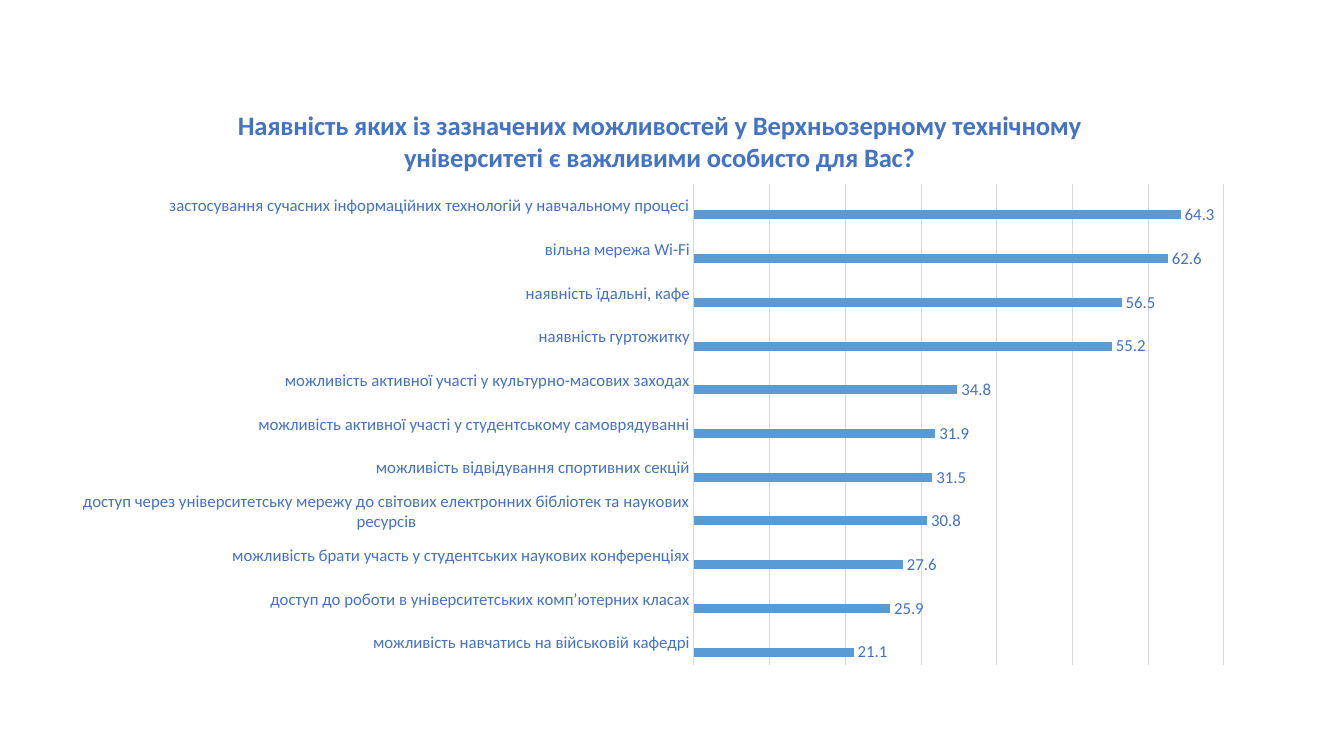
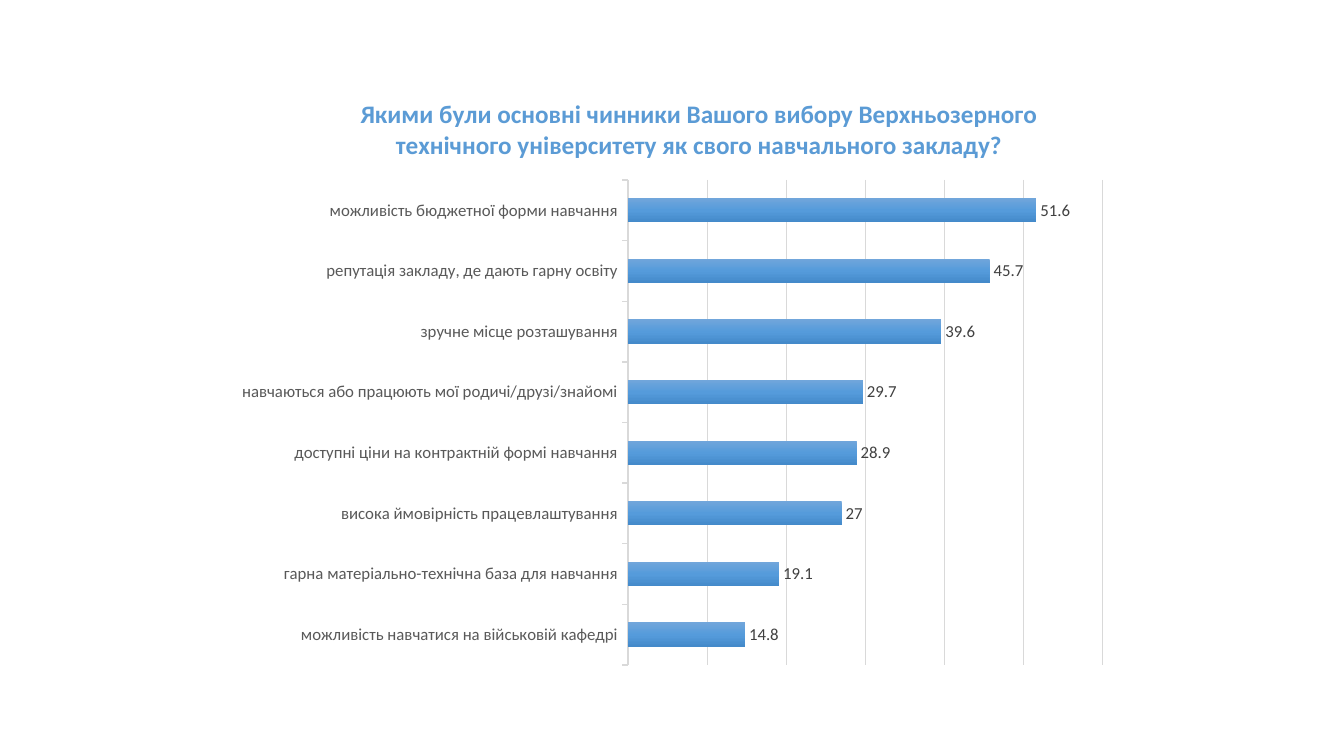
from copy import deepcopy
from dataclasses import dataclass
from typing import Optional

from lxml.etree import SubElement
from pptx import Presentation
from pptx.chart.chart import Chart
from pptx.chart.data import CategoryChartData
from pptx.dml.color import RGBColor as RGB
from pptx.dml.fill import FillFormat
from pptx.enum.chart import XL_CHART_TYPE as ChartType
from pptx.enum.chart import XL_LABEL_POSITION as LabelPos
from pptx.enum.chart import XL_TICK_LABEL_POSITION as TickLabels
from pptx.enum.chart import XL_TICK_MARK as Tick
from pptx.oxml.ns import qn
from pptx.text.text import Font
from pptx.util import Emu, Pt

SLIDE_W, SLIDE_H = 1344, 756
PX = 12192000 / SLIDE_W


@dataclass(frozen=True)
class Theme:
    face: str = "Calibri"
    blue: str = "4472C4"
    sky: str = "5B9BD5"
    orange: str = "ED7D31"
    silver: str = "A5A5A5"
    grid: str = "D9D9D9"
    grey: str = "595959"
    dark: str = "404040"
    gradient: tuple[str, ...] = ("71A6DB", "559BDB", "448ACA")
    label_size: int = 12
    grid_width: float = 0.75


THEME = Theme()


@dataclass(frozen=True)
class Box:
    left: int
    top: int
    width: int
    height: int


@dataclass(frozen=True)
class Survey:
    title: str
    title_size: int
    title_color: str
    title_left: int
    title_top: int
    frame: Box
    plot: Box
    answers: tuple[tuple[str, float], ...]  # from the bottom bar up
    fills: tuple[tuple[str, ...], ...]  # one per series; only the first has values
    axis_max: int
    gap: int
    category_color: str
    value_color: str
    tick: Tick
    axis_width: float


SURVEYS = (
    Survey(
        title="Наявність яких із зазначених можливостей у Верхньозерному технічному "
              "університеті є важливими особисто для Вас?",
        title_size=19, title_color=THEME.blue, title_left=233, title_top=102,
        frame=Box(59, 80, 1188, 598), plot=Box(694, 184, 530, 481),
        answers=(
            ("можливість навчатись на військовій кафедрі", 21.1),
            ("доступ до роботи в університетських комп’ютерних класах", 25.9),
            ("можливість брати участь у студентських наукових конференціях", 27.6),
            ("доступ через університетську мережу до світових електронних "
             "бібліотек та наукових ресурсів", 30.8),
            ("можливість відвідування спортивних секцій", 31.5),
            ("можливість активної участі у студентському самоврядуванні", 31.9),
            ("можливість активної участі у культурно-масових заходах", 34.8),
            ("наявність гуртожитку", 55.2),
            ("наявність їдальні, кафе", 56.5),
            ("вільна мережа Wi-Fi", 62.6),
            ("застосування сучасних інформаційних технологій у навчальному процесі", 64.3),
        ),
        fills=((THEME.sky,), (THEME.orange,), (THEME.silver,)),
        axis_max=70, gap=182, category_color=THEME.blue, value_color=THEME.blue,
        tick=Tick.NONE, axis_width=0.75,
    ),
    Survey(
        title="Якими були основні чинники Вашого вибору Верхньозерного "
              "технічного університету як свого навчального закладу?",
        title_size=18, title_color=THEME.sky, title_left=356, title_top=92,
        frame=Box(224, 80, 896, 598), plot=Box(628, 180, 475, 485),
        answers=(
            ("можливість навчатися на військовій кафедрі", 14.8),
            ("гарна матеріально-технічна база для навчання", 19.1),
            ("висока ймовірність працевлаштування", 27),
            ("доступні ціни на контрактній формі навчання", 28.9),
            ("навчаються або працюють мої родичі/друзі/знайомі", 29.7),
            ("зручне місце розташування", 39.6),
            ("репутація закладу, де дають гарну освіту", 45.7),
            ("можливість бюджетної форми навчання", 51.6),
        ),
        fills=(THEME.gradient,),
        axis_max=60, gap=150, category_color=THEME.grey, value_color=THEME.dark,
        tick=Tick.OUTSIDE, axis_width=1,
    ),
)


def px(n: int) -> Emu:
    return Emu(round(n * PX))


def set_font(font: Font, size: int, color: str, bold: bool = False) -> None:
    font.name, font.size, font.bold = THEME.face, Pt(size), bold
    font.color.rgb = RGB.from_string(color)


def paint(fill: FillFormat, colors: tuple[str, ...], gs_list_owner) -> None:
    """Fill solid for one colour, else with an even top-to-bottom gradient."""
    if len(colors) == 1:
        fill.solid()
        fill.fore_color.rgb = RGB.from_string(colors[0])
        return
    fill.gradient()
    fill.gradient_angle = 270
    gs_list = next(gs_list_owner.iter(qn("a:gsLst")))
    for _ in colors[2:]:
        gs_list.insert(1, deepcopy(gs_list[0]))
    for i, (stop, color) in enumerate(zip(fill.gradient_stops, colors)):
        stop.position = i / (len(colors) - 1)
        stop.color.rgb = RGB.from_string(color)


def set_layout(parent, index: int, frame: Box, left: int, top: int,
               size: Optional[tuple[int, int]] = None) -> None:
    """Fix the place of a chart part, given in slide px, inside the chart frame."""
    for old in parent.findall(qn("c:layout")):
        parent.remove(old)
    layout = SubElement(parent, qn("c:layout"))
    parent.insert(index, layout)
    manual = SubElement(layout, qn("c:manualLayout"))
    values = {"xMode": "edge", "yMode": "edge",
              "x": (left - frame.left) / frame.width,
              "y": (top - frame.top) / frame.height}
    if size:
        values = {"layoutTarget": "inner", **values,
                  "w": size[0] / frame.width, "h": size[1] / frame.height}
    for tag, value in values.items():
        SubElement(manual, qn(f"c:{tag}")).set("val", str(value))


def style_title(chart: Chart, survey: Survey) -> None:
    chart.has_title = True
    tf = chart.chart_title.text_frame
    tf.text = survey.title
    set_font(tf.paragraphs[0].font, survey.title_size, survey.title_color, bold=True)
    chart.chart_title.include_in_layout = False
    title = chart.element.xpath("c:chart/c:title")[0]
    set_layout(title, 1, survey.frame, survey.title_left, survey.title_top)


def style_axes(chart: Chart, survey: Survey) -> None:
    cat, val = chart.category_axis, chart.value_axis
    cat.major_tick_mark, cat.minor_tick_mark = survey.tick, Tick.NONE
    cat.tick_label_position = TickLabels.NEXT_TO_AXIS
    cat.has_major_gridlines = False
    set_font(cat.tick_labels.font, THEME.label_size, survey.category_color)
    val.visible = False
    val.minimum_scale, val.maximum_scale, val.major_unit = 0, survey.axis_max, 10
    val.has_major_gridlines = True
    for line, width in ((cat.format.line, survey.axis_width),
                        (val.major_gridlines.format.line, THEME.grid_width)):
        line.color.rgb = RGB.from_string(THEME.grid)
        line.width = Pt(width)


def style_bars(chart: Chart, survey: Survey) -> None:
    plot = chart.plots[0]
    plot.gap_width, plot.overlap = survey.gap, 0
    plot.vary_by_categories = False
    for series, colors in zip(plot.series, survey.fills):
        paint(series.format.fill, colors, series.format.element
              if hasattr(series.format, "element") else chart.element)
        labels = series.data_labels
        labels.show_value = True
        labels.position = LabelPos.OUTSIDE_END
        set_font(labels.font, THEME.label_size, survey.value_color)


def add_survey(prs: Presentation, survey: Survey) -> None:
    data = CategoryChartData()
    data.categories = [name for name, _ in survey.answers]
    for i in range(len(survey.fills)):
        data.add_series(f"Series {i + 1}",
                        [None if i else value for _, value in survey.answers])
    s = prs.slides.add_slide(prs.slide_layouts[6])
    f = survey.frame
    chart = s.shapes.add_chart(ChartType.BAR_CLUSTERED, px(f.left), px(f.top),
                               px(f.width), px(f.height), data).chart
    set_font(chart.font, 10, survey.category_color)
    chart.has_legend = False
    style_title(chart, survey)
    style_axes(chart, survey)
    style_bars(chart, survey)
    p = survey.plot
    plot_area = chart.element.xpath("c:chart/c:plotArea")[0]
    set_layout(plot_area, 0, f, p.left, p.top, (p.width, p.height))


def main() -> None:
    prs = Presentation()
    prs.slide_width, prs.slide_height = px(SLIDE_W), px(SLIDE_H)
    for survey in SURVEYS:
        add_survey(prs, survey)
    prs.save("out.pptx")


if __name__ == "__main__":
    main()
